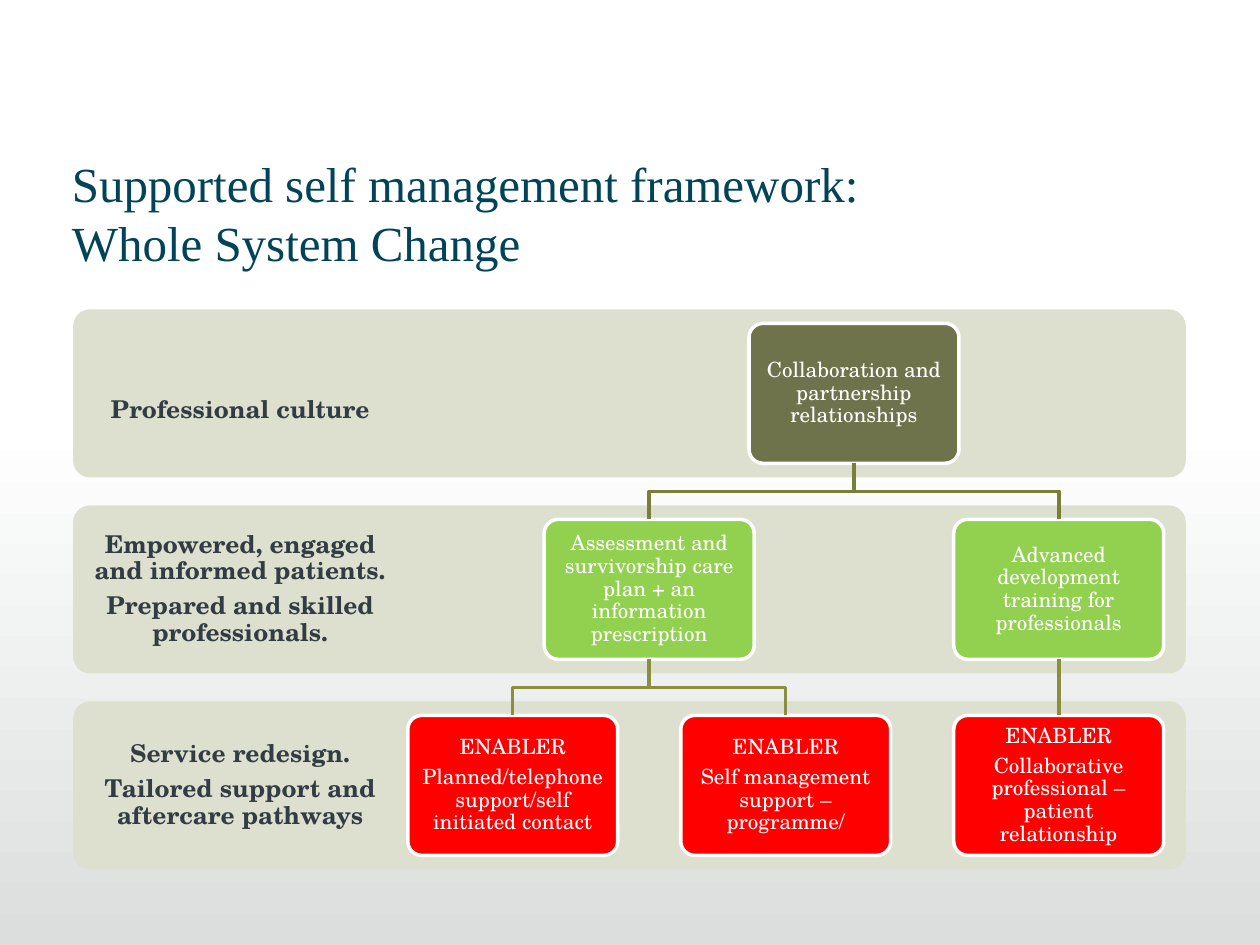
from pptx import Presentation
from pptx.dml.color import RGBColor
from pptx.enum.shapes import MSO_CONNECTOR, MSO_SHAPE
from pptx.enum.text import MSO_ANCHOR, PP_ALIGN
from pptx.oxml.ns import qn
from pptx.util import Pt
from lxml import etree

RECT, ROUND = MSO_SHAPE.RECTANGLE, MSO_SHAPE.ROUNDED_RECTANGLE
STRAIGHT = MSO_CONNECTOR.STRAIGHT
MIDDLE, CENTER = MSO_ANCHOR.MIDDLE, PP_ALIGN.CENTER
SERIF, SCHOOL = "Times New Roman", "TeX Gyre Schola"

LEFT, TOP, WIDE, HIGH, STEP = 41.8, 176.8, 635.8, 96, 112
CARD_W, CARD_H, PAD = 120, 80, 8
LABEL_W = 191
COLS = [293 + 156 * i for i in range(3)]
PAIR = (COLS[0] + COLS[1]) / 2
ROOT = (PAIR + COLS[2]) / 2

BANDS = [
    (["Professional culture"], 10),
    (["Empowered, engaged and informed patients.",
      "Prepared and skilled professionals."], 0),
    (["Service redesign.", "Tailored support and aftercare pathways"], 0),
]
CARDS = [
    (0, ROOT, "6F734B", ["Collaboration and partnership relationships"]),
    (1, PAIR, "92D050", ["Assessment and survivorship care plan + an information prescription"]),
    (1, COLS[2], "92D050", ["Advanced development training for professionals"]),
    (2, COLS[0], "FF0000", ["ENABLER", "Planned/telephone support/self initiated contact"]),
    (2, COLS[1], "FF0000", ["ENABLER", "Self management support – programme/"]),
    (2, COLS[2], "FF0000", ["ENABLER", "Collaborative professional –patient relationship"]),
]
LINKS = [(0, 1, "797F37"), (0, 2, "797F37"), (1, 3, "898F3F"),
         (1, 4, "898F3F"), (2, 5, "898F3F")]


def tint(code):
    """Turn a hex string into a colour."""
    return RGBColor.from_string(code)


def write(shape, lines, size, code, inset, bold=False):
    """Fill a shape with centred paragraphs."""
    frame = shape.text_frame
    frame.word_wrap = True
    frame.vertical_anchor = MIDDLE
    frame.margin_left = frame.margin_right = Pt(inset)
    frame.margin_top = frame.margin_bottom = Pt(inset)
    for i, line in enumerate(lines):
        para = frame.add_paragraph() if i else frame.paragraphs[0]
        para.alignment = CENTER
        para.line_spacing = 0.9
        para.space_after = Pt(0.35 * size if i < len(lines) - 1 else 0)
        run = para.add_run()
        run.text = line
        font = run.font
        font.name, font.size, font.bold = SCHOOL, Pt(size), bold
        font.color.rgb = tint(code)


def add_panel(slide, kind, x, y, w, h):
    """Add a plain shape without shadow or line."""
    shape = slide.shapes.add_shape(kind, Pt(x), Pt(y), Pt(w), Pt(h))
    shape.shadow.inherit = False
    shape.line.fill.background()
    if kind == ROUND:
        shape.adjustments[0] = 0.1
    return shape


def add_shade(slide, x, y, w, h):
    """Shade the lower part of the slide."""
    fill = add_panel(slide, RECT, x, y, w, h).fill
    fill.gradient()
    fill.gradient_angle = 270
    for stop, code in zip(fill.gradient_stops, ("FFFFFF", "DCDEDE")):
        stop.color.rgb = tint(code)


def add_title(slide, x, y, w, h):
    """Write the two-line title."""
    frame = slide.shapes.add_textbox(Pt(x), Pt(y), Pt(w), Pt(h)).text_frame
    frame.word_wrap = True
    para = frame.paragraphs[0]
    para.line_spacing = Pt(33.6)
    for i, line in enumerate(["Supported self management framework:", "Whole System Change"]):
        if i:
            para.add_line_break()
        run = para.add_run()
        run.text = line
        run.font.name, run.font.size = SERIF, Pt(28)
        run.font.color.rgb = tint("014359")


def add_band(slide, x, y, w, h, lines, drop):
    """Draw one level of the framework with its label."""
    band = add_panel(slide, ROUND, x, y, w, h)
    band.fill.solid()
    band.fill.fore_color.rgb = tint("DDDFCF")
    label = slide.shapes.add_textbox(Pt(x), Pt(y + drop), Pt(LABEL_W), Pt(h))
    write(label, lines, 14, "323D43", PAD, True)


def add_card(slide, x, y, w, h, code, lines):
    """Draw one white-edged card."""
    card = add_panel(slide, ROUND, x, y, w, h)
    card.fill.solid()
    card.fill.fore_color.rgb = tint(code)
    card.line.color.rgb = tint("FFFFFF")
    card.line.width = Pt(2)
    write(card, lines, 12, "FFFFFF", 3.6)
    return card


def add_link(slide, upper, lower, code):
    """Join the bottom of one card to the top of another."""
    x1, y1 = upper.left + upper.width // 2, upper.top + upper.height
    x2, y2 = lower.left + lower.width // 2, lower.top
    if x1 == x2:
        link = slide.shapes.add_connector(STRAIGHT, x1, y1, x2, y2)
        link.begin_connect(upper, 2)
        link.end_connect(lower, 0)
        etree.SubElement(link._element.spPr, qn("a:effectLst"))
    else:
        mid = (y1 + y2) // 2
        path = slide.shapes.build_freeform(x1, y1)
        path.add_line_segments([(x1, mid), (x2, mid), (x2, y2)], close=False)
        link = path.convert_to_shape()
        link.shadow.inherit = False
        link.fill.background()
    link.line.color.rgb = tint(code)
    link.line.width = Pt(2)


def add_tree(slide, x, y, w):
    """Draw the bands, the cards and their links."""
    for i, (lines, drop) in enumerate(BANDS):
        add_band(slide, x, y + i * STEP, w, HIGH, lines, drop)
    cards = [add_card(slide, x + mid - LEFT - CARD_W / 2, y + row * STEP + PAD,
                      CARD_W, CARD_H, code, lines)
             for row, mid, code, lines in CARDS]
    for start, end, code in LINKS:
        add_link(slide, cards[start], cards[end], code)


def main():
    """Build and save the slide."""
    deck = Presentation()
    deck.slide_width, deck.slide_height = Pt(720), Pt(540)
    slide = deck.slides.add_slide(deck.slide_layouts[6])
    add_shade(slide, 0, 240, 720, 300)
    add_title(slide, 34, 84.2, 646.6, 67.7)
    add_tree(slide, LEFT, TOP, WIDE)
    deck.save("out.pptx")


if __name__ == "__main__":
    main()
